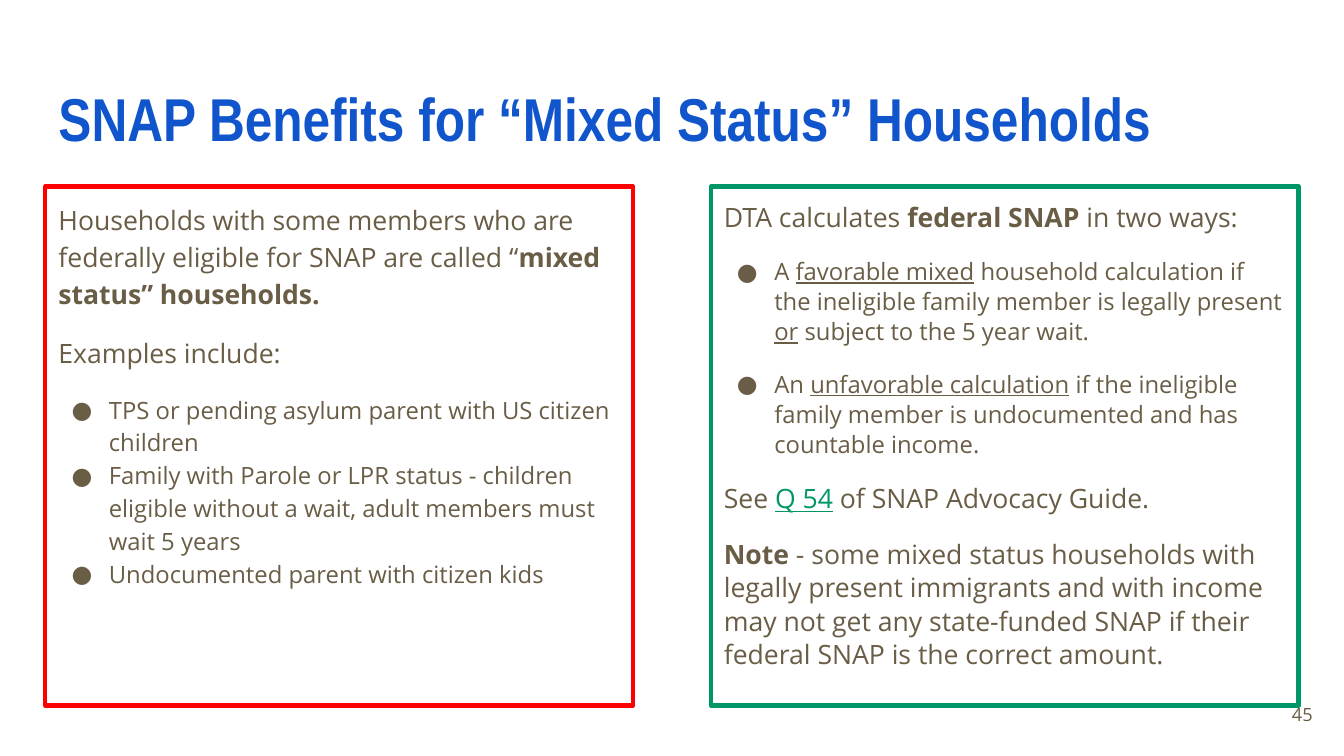
from lxml import etree
from pptx import Presentation
from pptx.dml.color import RGBColor
from pptx.enum.shapes import MSO_SHAPE
from pptx.enum.text import MSO_ANCHOR, PP_ALIGN
from pptx.oxml.ns import qn
from pptx.util import Inches, Pt

RECTANGLE = MSO_SHAPE.RECTANGLE
TOP, MIDDLE = MSO_ANCHOR.TOP, MSO_ANCHOR.MIDDLE
LEFT, RIGHT = PP_ALIGN.LEFT, PP_ALIGN.RIGHT

BLUE = RGBColor(0x11, 0x55, 0xCC)
BROWN = RGBColor(0x69, 0x5D, 0x46)
RED = RGBColor(0xFF, 0x00, 0x00)
GREEN = RGBColor(0x00, 0x96, 0x68)

BODY_SIZE, BULLET_SIZE, GAP = 19, 17, 16
BOLD = {"bold": True}
UNDERLINE = {"underline": True}
REFERENCE = {"underline": True, "color": GREEN}


class SlideBuilder:
    heading_font = "Arial Narrow"
    body_font = "Open Sans"
    inset = Inches(0.13)

    def __init__(self, prs):
        self.slide = prs.slides.add_slide(prs.slide_layouts[6])

    def frame(self, sp, anchor):
        tf = sp.text_frame
        tf.word_wrap = True
        tf.vertical_anchor = anchor
        tf.margin_left = tf.margin_right = self.inset
        tf.margin_top = tf.margin_bottom = self.inset
        return tf

    def label(self, text, left, top, width, height, font, size, color,
              bold=False, align=LEFT):
        sp = self.slide.shapes.add_textbox(
            Inches(left), Inches(top), Inches(width), Inches(height))
        tf = self.frame(sp, MIDDLE)
        tf.text = text
        p = tf.paragraphs[0]
        p.alignment = align
        self.style(p.runs[0], font, size, color, bold)

    def style(self, r, font, size, color=BROWN, bold=False, underline=False):
        r.font.name = font
        r.font.size = Pt(size)
        r.font.color.rgb = color
        r.font.bold = bold
        r.font.underline = underline

    def bullet(self, p):
        pPr = p._p.get_or_add_pPr()
        pPr.set("marL", str(Inches(0.5)))
        pPr.set("indent", str(Inches(-0.37)))
        color = etree.SubElement(pPr, qn("a:buClr"))
        etree.SubElement(color, qn("a:srgbClr"), val=str(BROWN))
        etree.SubElement(pPr, qn("a:buFont"), typeface=self.body_font)
        etree.SubElement(pPr, qn("a:buChar"), char="●")

    def panel(self, left, color, spacing, paragraphs):
        sp = self.slide.shapes.add_shape(
            RECTANGLE, Inches(left), Inches(1.85), Inches(5.83), Inches(5.15))
        sp.shadow.inherit = False
        sp.fill.background()
        sp.line.color.rgb = color
        sp.line.width = Pt(3)
        tf = self.frame(sp, TOP)
        for i, (bulleted, before, runs) in enumerate(paragraphs):
            p = tf.add_paragraph() if i else tf.paragraphs[0]
            if bulleted:
                self.bullet(p)
            p.alignment = LEFT
            p.line_spacing = spacing
            p.space_before = Pt(before)
            size = BULLET_SIZE if bulleted else BODY_SIZE
            for text, look in runs:
                r = p.add_run()
                r.text = text
                self.style(r, self.body_font, size, **look)
        p.space_after = Pt(GAP)


HOUSEHOLDS = [
    (False, 0, [
        ("Households with some members who are federally eligible for SNAP "
         "are called “", {}),
        ("mixed status” households.", BOLD)]),
    (False, GAP, [("Examples include:", {})]),
    (True, GAP, [
        ("TPS or pending asylum parent with US citizen children", {})]),
    (True, 0, [
        ("Family with Parole or LPR status - children eligible without a "
         "wait, adult members must wait 5 years", {})]),
    (True, 0, [("Undocumented parent with citizen kids", {})]),
]

CALCULATIONS = [
    (False, 0, [
        ("DTA calculates ", {}),
        ("federal SNAP", BOLD),
        (" in two ways:", {})]),
    (True, GAP, [
        ("A ", {}),
        ("favorable mixed", UNDERLINE),
        (" household calculation if the ineligible family member is legally "
         "present ", {}),
        ("or", UNDERLINE),
        (" subject to the 5 year wait.", {})]),
    (True, GAP, [
        ("An ", {}),
        ("unfavorable calculation", UNDERLINE),
        (" if the ineligible family member is undocumented and has countable "
         "income.", {})]),
    (False, GAP, [
        ("See ", {}),
        ("Q 54", REFERENCE),
        (" of SNAP Advocacy Guide.", {})]),
    (False, GAP, [
        ("Note", BOLD),
        (" - some mixed status households with legally present immigrants and "
         "with income may not get any state-funded SNAP if their federal SNAP "
         "is the correct amount.", {})]),
]


def main():
    prs = Presentation()
    prs.slide_width, prs.slide_height = Inches(13.33), Inches(7.5)
    s = SlideBuilder(prs)
    s.label("SNAP Benefits for “Mixed Status” Households",
            0.45, 0.65, 12.42, 1.03, s.heading_font, 43.2, BLUE, bold=True)
    s.panel(0.45, RED, 1.15, HOUSEHOLDS)
    s.label("45", 12.35, 6.8, 0.8, 0.57, s.body_font, 13, BROWN, align=RIGHT)
    s.panel(7.05, GREEN, 1.05, CALCULATIONS)
    prs.save("out.pptx")


if __name__ == "__main__":
    main()
